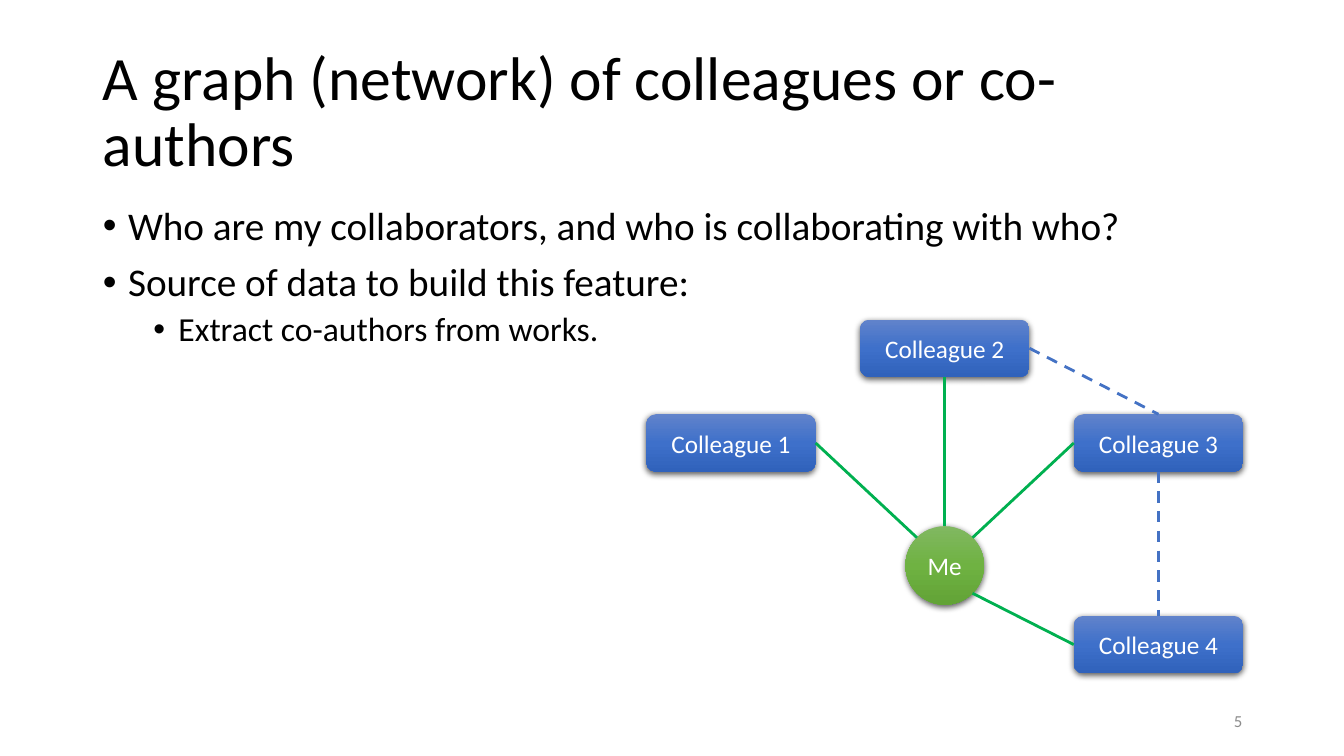
"""Draw a slide showing a network of colleagues around one person."""
import copy
import math

import pptx
import pptx.dml.color
import pptx.enum.dml
import pptx.enum.shapes
import pptx.enum.text
import pptx.oxml
import pptx.oxml.ns
import pptx.util

SCALE = 9144
FONT = "Calibri"
COLORS = {
    "text": "000000", "light": "FFFFFF", "number": "8C8C8C",
    "mine": "00B050", "other": "4472C4",
}
BLENDS = {
    "green": ("81B861", "6FB242", "62A336"),
    "blue": ("6183CB", "3E70CA", "3062BB"),
}
ALIGN = pptx.enum.text.PP_ALIGN
MIDDLE = pptx.enum.text.MSO_ANCHOR.MIDDLE
KIND = pptx.enum.shapes.MSO_SHAPE
NS = pptx.oxml.ns.nsdecls("a")
SHADOW = (
    f'<a:outerShdw {NS} blurRad="57150" dist="19050" dir="5400000" algn="ctr" '
    'rotWithShape="0"><a:srgbClr val="000000"><a:alpha val="63000"/>'
    '</a:srgbClr></a:outerShdw>'
)
TOP, LEFT, BOTTOM, RIGHT = range(4)


def px(count):
    return pptx.util.Emu(round(count * SCALE))


def rgb(code):
    return pptx.dml.color.RGBColor.from_string(code)


def write(para, text, size=18, color="text", align=ALIGN.LEFT, spacing=1.0, before=0):
    para.alignment = align
    para.line_spacing = spacing
    para.space_before = pptx.util.Pt(before)
    run = para.add_run()
    run.text = text
    run.font.name = FONT
    run.font.size = pptx.util.Pt(size)
    run.font.color.rgb = rgb(COLORS[color])


class Canvas:
    def __init__(self, deck):
        self.slide = deck.slides.add_slide(deck.slide_layouts[1])
        self.shapes = self.slide.shapes

    def place(self, holder, box):
        holder.left, holder.top, holder.width, holder.height = map(px, box)
        frame = holder.text_frame
        frame.word_wrap = True
        frame.auto_size = pptx.enum.text.MSO_AUTO_SIZE.NONE
        return frame

    def title(self, text, box):
        frame = self.place(self.shapes.title, box)
        frame.vertical_anchor = MIDDLE
        write(frame.paragraphs[0], text, size=44, spacing=0.9)

    def bullets(self, items, box):
        frame = self.place(self.slide.placeholders[1], box)
        for order, (level, text) in enumerate(items):
            para = frame.add_paragraph() if order else frame.paragraphs[0]
            para.level = level
            write(para, text, size=28 - 4 * level, spacing=0.9, before=10 - 5 * level)
            props = para._p.get_or_add_pPr()
            props.set("marL", str(px(25 + 50 * level)))
            props.set("indent", str(px(-25)))
            for mark in ('buFont {} typeface="Arial"', 'buChar {} char="•"'):
                props.append(pptx.oxml.parse_xml(f"<a:{mark.format(NS)}/>"))

    def label(self, text, box, **style):
        frame = self.place(self.shapes.add_textbox(0, 0, 0, 0), box)
        frame.vertical_anchor = MIDDLE
        write(frame.paragraphs[0], text, **style)

    def node(self, text, kind, box, blend):
        shape = self.shapes.add_shape(kind, *map(px, box))
        shape.fill.gradient()
        shape.fill.gradient_angle = 270
        stops = shape._element.spPr.find(".//" + pptx.oxml.ns.qn("a:gsLst"))
        stops.append(copy.deepcopy(stops[0]))
        for order, stop in enumerate(shape.fill.gradient_stops):
            stop.position = order / 2
            stop.color.rgb = rgb(BLENDS[blend][order])
        shape.line.fill.background()
        shape.shadow.inherit = False
        effects = shape._element.spPr.find(pptx.oxml.ns.qn("a:effectLst"))
        effects.append(pptx.oxml.parse_xml(SHADOW))
        frame = shape.text_frame
        frame.word_wrap = True
        frame.vertical_anchor = MIDDLE
        write(frame.paragraphs[0], text, color="light", align=ALIGN.CENTER)
        return shape

    def link(self, color, start=(0, 0), end=(0, 0), head=None, tail=None, dash=False):
        line = self.shapes.add_connector(
            pptx.enum.shapes.MSO_CONNECTOR.STRAIGHT, *map(px, (*start, *end)))
        if head:
            line.begin_connect(*head)
        if tail:
            line.end_connect(*tail)
        line.line.color.rgb = rgb(COLORS[color])
        line.line.width = pptx.util.Pt(2)
        if dash:
            line.line.dash_style = pptx.enum.dml.MSO_LINE.DASH
        line._element.spPr.append(pptx.oxml.parse_xml(f"<a:effectLst {NS}/>"))


def main():
    deck = pptx.Presentation()
    deck.slide_width, deck.slide_height = px(1333), px(750)
    canvas = Canvas(deck)
    canvas.title("A graph (network) of colleagues or co-authors", (92, 40, 1150, 145))
    canvas.bullets([
        (0, "Who are my collaborators, and who is collaborating with who?"),
        (0, "Source of data to build this feature:"),
        (1, "Extract co-authors from works."),
    ], (92, 200, 1150, 476))

    mid_x, mid_y, radius = 937, 561, 39
    me = canvas.node("Me", KIND.OVAL, (
        mid_x - radius, mid_y - radius, 2 * radius, 2 * radius), "green")
    spots = [(0, 411), (1, 317), (2, 411), (2, 611)]
    one, two, three, four = [
        canvas.node(f"Colleague {order}", KIND.ROUNDED_RECTANGLE,
                    (641 + 212 * col, top, 168, 57), "blue")
        for order, (col, top) in enumerate(spots, 1)
    ]

    reach = radius * math.sqrt(0.5)
    for mate, side, dx, dy in [(one, RIGHT, -1, -1), (three, LEFT, 1, -1), (four, LEFT, 1, 1)]:
        canvas.link("mine", start=(mid_x + dx * reach, mid_y + dy * reach), tail=(mate, side))
    canvas.link("mine", head=(two, BOTTOM), tail=(me, TOP))
    canvas.link("other", head=(three, BOTTOM), tail=(four, TOP), dash=True)
    canvas.link("other", head=(two, RIGHT), tail=(three, TOP), dash=True)
    canvas.label("5", (942, 695, 300, 40), size=12, color="number", align=ALIGN.RIGHT)
    deck.save("out.pptx")


if __name__ == "__main__":
    main()
